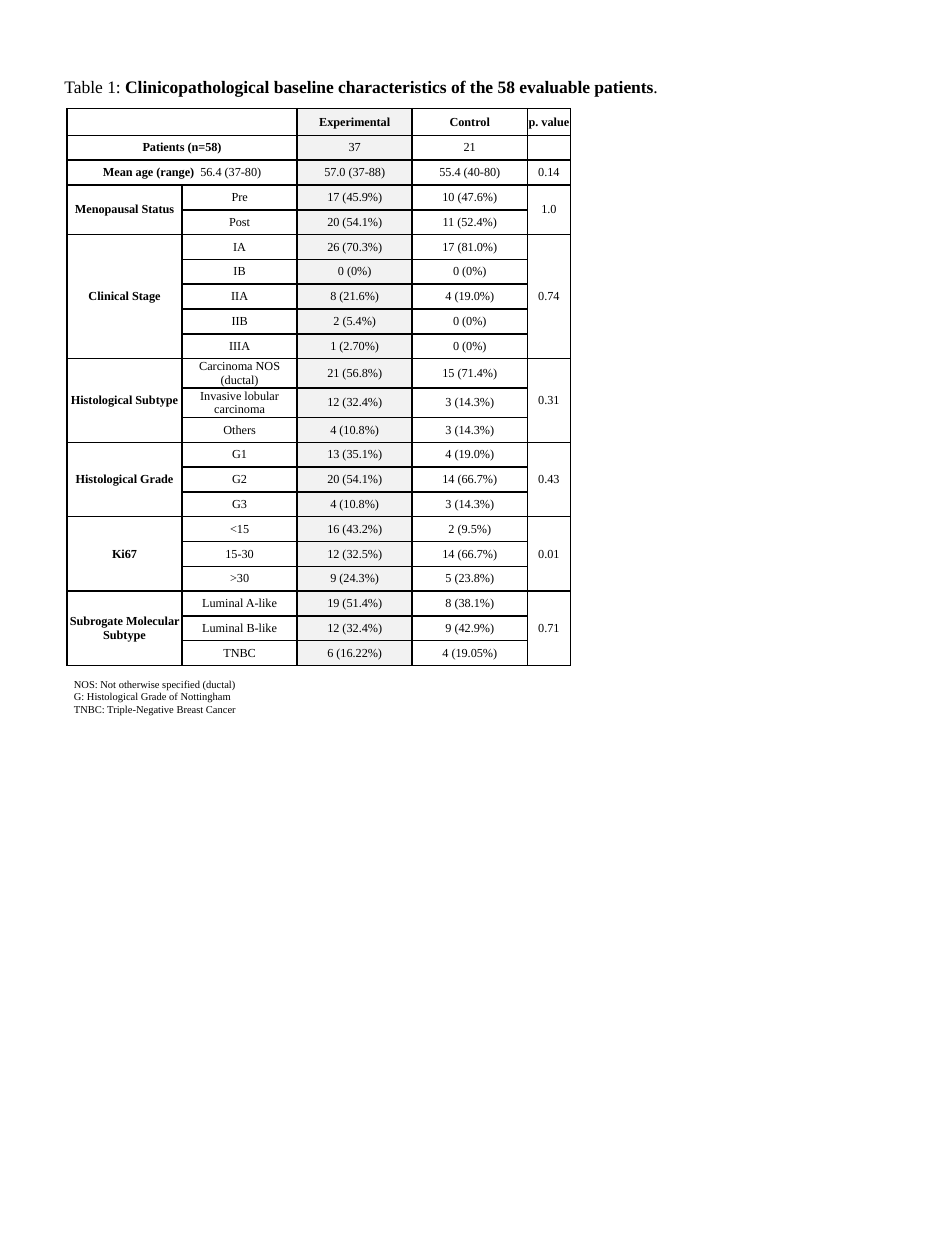
from lxml import etree
from pptx import Presentation
from pptx import util as u
from pptx.dml.color import RGBColor
from pptx.enum import text
from pptx.oxml.ns import qn

BLACK = RGBColor(0x00, 0x00, 0x00)
WHITE = RGBColor(0xFF, 0xFF, 0xFF)
LIGHT_GREY = RGBColor(0xF2, 0xF2, 0xF2)
FONT = "Times New Roman"


def add_run(paragraph, words, size, bold=False):
    run = paragraph.add_run()
    run.text = words
    run.font.name = FONT
    run.font.size = u.Pt(size)
    run.font.bold = bold
    run.font.color.rgb = BLACK


def draw_borders(cell, width):
    properties = cell._tc.get_or_add_tcPr()
    for position, side in enumerate(("a:lnL", "a:lnR", "a:lnT", "a:lnB")):
        line = etree.Element(qn(side), w=str(u.Pt(width)))
        fill = etree.SubElement(line, qn("a:solidFill"))
        etree.SubElement(fill, qn("a:srgbClr"), val=str(BLACK))
        properties.insert(position, line)


presentation = Presentation()
presentation.slide_width = u.Cm(19.05)
presentation.slide_height = u.Cm(25.4)
slide = presentation.slides.add_slide(presentation.slide_layouts[6])

# Title
title = slide.shapes.add_textbox(u.Cm(1.2), u.Cm(1.35), u.Cm(13.54), u.Cm(0.84))
frame = title.text_frame
frame.word_wrap = True
frame.vertical_anchor = text.MSO_ANCHOR.MIDDLE
frame.margin_left = frame.margin_right = u.Cm(0.1)
frame.margin_top = frame.margin_bottom = u.Cm(0.05)
paragraph = frame.paragraphs[0]
paragraph.line_spacing = 0.9
paragraph.space_after = u.Pt(2.5)
add_run(paragraph, "Table 1: ", 10)
add_run(paragraph, "Clinicopathological baseline characteristics of the 58 evaluable patients", 10, True)
add_run(paragraph, ".", 10)

# Table content: heading rows, then groups of (name, p value, levels)
heading_rows = [
    ("", "Experimental", "Control", "p. value"),
    ("Patients (n=58)", "37", "21", ""),
    ("Mean age (range) ", "57.0 (37-88)", "55.4 (40-80)", "0.14"),
]
groups = [
    ("Menopausal Status", "1.0", [
        ("Pre", "17 (45.9%)", "10 (47.6%)"),
        ("Post", "20 (54.1%)", "11 (52.4%)")]),
    ("Clinical Stage", "0.74", [
        ("IA", "26 (70.3%)", "17 (81.0%)"),
        ("IB", "0 (0%)", "0 (0%)"),
        ("IIA", "8 (21.6%)", "4 (19.0%)"),
        ("IIB", "2 (5.4%)", "0 (0%)"),
        ("IIIA", "1 (2.70%)", "0 (0%)")]),
    ("Histological Subtype", "0.31", [
        ("Carcinoma NOS (ductal)", "21 (56.8%)", "15 (71.4%)"),
        ("Invasive lobular carcinoma", "12 (32.4%)", "3 (14.3%)"),
        ("Others", "4 (10.8%)", "3 (14.3%)")]),
    ("Histological Grade", "0.43", [
        ("G1", "13 (35.1%)", "4 (19.0%)"),
        ("G2", "20 (54.1%)", "14 (66.7%)"),
        ("G3", "4 (10.8%)", "3 (14.3%)")]),
    ("Ki67", "0.01", [
        ("<15", "16 (43.2%)", "2 (9.5%)"),
        ("15-30", "12 (32.5%)", "14 (66.7%)"),
        (">30", "9 (24.3%)", "5 (23.8%)")]),
    ("Subrogate Molecular Subtype", "0.71", [
        ("Luminal A-like", "19 (51.4%)", "8 (38.1%)"),
        ("Luminal B-like", "12 (32.4%)", "9 (42.9%)"),
        ("TNBC", "6 (16.22%)", "4 (19.05%)")]),
]

# Flatten into five columns and note the merged areas
rows = [(label, "", *values) for label, *values in heading_rows]
merges = [(row, 0, row, 1) for row in range(len(rows))]
for name, p_value, levels in groups:
    first, last = len(rows), len(rows) + len(levels) - 1
    merges += [(first, column, last, column) for column in (0, 4)]
    for index, level in enumerate(levels):
        rows.append((name if index == 0 else "", *level, p_value if index == 0 else ""))

# Table grid
column_widths = [2.32] * 4 + [0.87]
row_heights = [0.54] + [0.5] * (len(rows) - 1)
row_heights[10] = row_heights[11] = 0.54
graphic = slide.shapes.add_table(len(rows), len(column_widths), u.Cm(1.35), u.Cm(2.19),
                                 u.Cm(sum(column_widths)), u.Cm(sum(row_heights)))
table = graphic.table
table.first_row = table.horz_banding = False
for column, width in zip(table.columns, column_widths):
    column.width = u.Cm(width)
for row, height in zip(table.rows, row_heights):
    row.height = u.Cm(height)

# Cells
for row_index, row in enumerate(rows):
    for column_index, words in enumerate(row):
        cell = table.cell(row_index, column_index)
        cell.margin_left = cell.margin_right = cell.margin_top = cell.margin_bottom = 0
        cell.vertical_anchor = text.MSO_ANCHOR.MIDDLE
        cell.fill.solid()
        cell.fill.fore_color.rgb = LIGHT_GREY if column_index == 2 else WHITE
        draw_borders(cell, 1)
        paragraph = cell.text_frame.paragraphs[0]
        paragraph.alignment = text.PP_ALIGN.CENTER
        if words:
            add_run(paragraph, words, 7, row_index == 0 or column_index == 0)
        else:
            # Small end mark, so that an empty cell does not stretch its row
            etree.SubElement(paragraph._p, qn("a:endParaRPr"), sz="700")
add_run(table.cell(2, 0).text_frame.paragraphs[0], " 56.4 (37-80)", 7)

for top, left, bottom, right in merges:
    table.cell(top, left).merge(table.cell(bottom, right))

# Footnotes
footnotes = slide.shapes.add_textbox(u.Cm(1.35), u.Cm(13.59), u.Cm(8.33), u.Cm(0.91))
frame = footnotes.text_frame
frame.word_wrap = True
frame.auto_size = text.MSO_AUTO_SIZE.SHAPE_TO_FIT_TEXT
frame.margin_left = frame.margin_right = u.Cm(0.14)
frame.margin_top = frame.margin_bottom = u.Cm(0.07)
notes = ["NOS: Not otherwise specified (ductal)", "G: Histological Grade of Nottingham",
         "TNBC: Triple-Negative Breast Cancer"]
for index, note in enumerate(notes):
    paragraph = frame.add_paragraph() if index else frame.paragraphs[0]
    add_run(paragraph, note, 6)

presentation.save("out.pptx")
